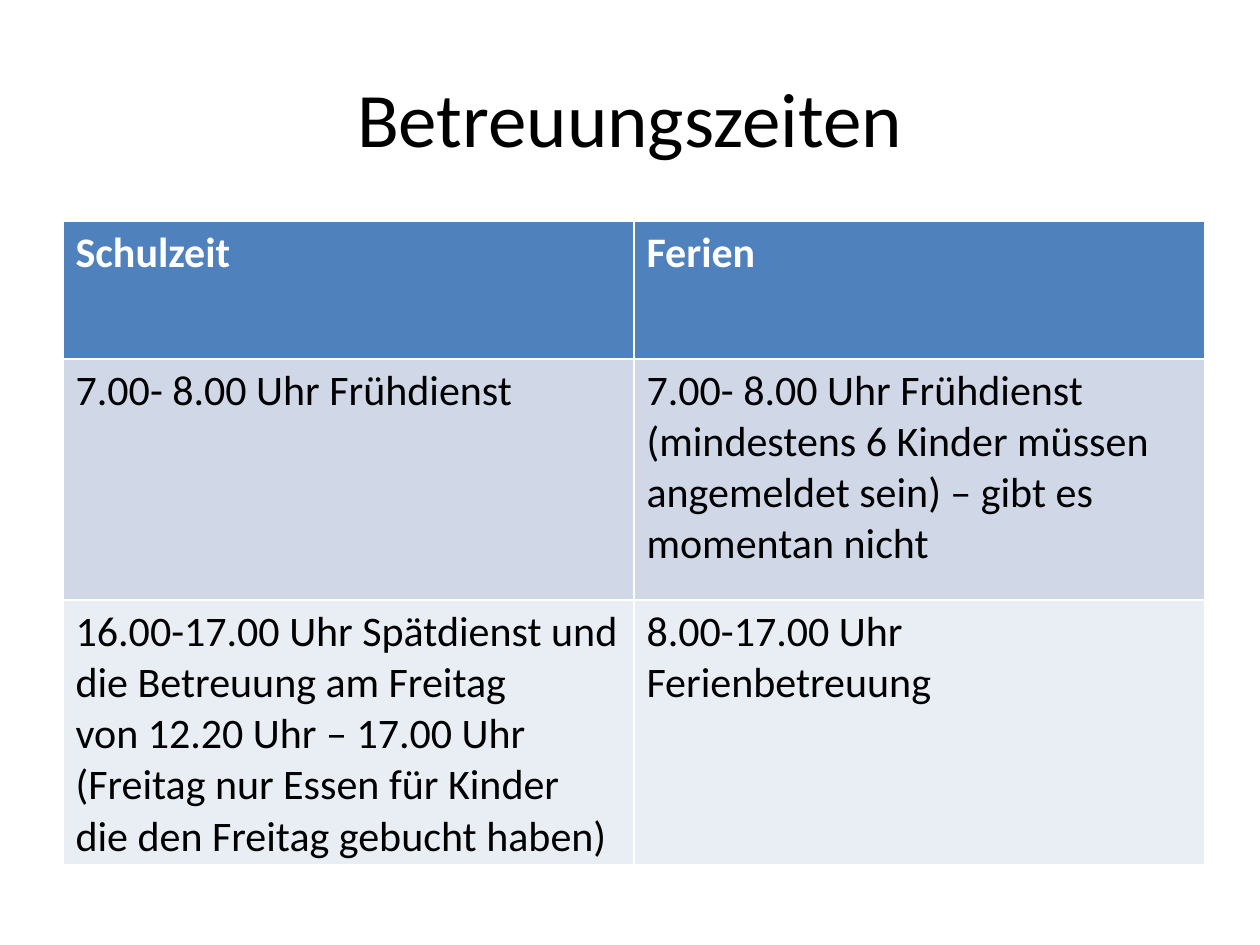
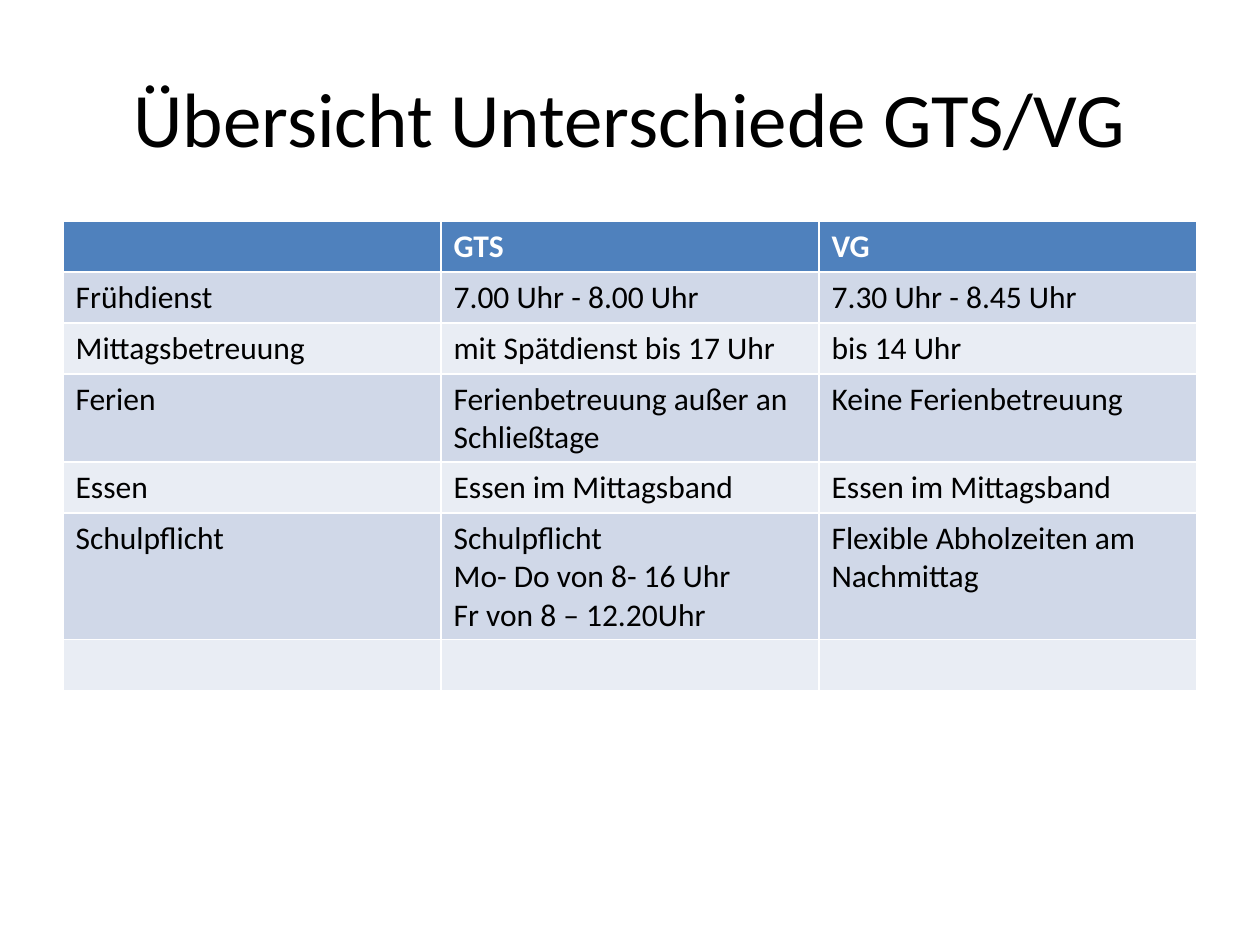
from pptx import Presentation
from pptx.dml.color import RGBColor
from pptx.enum.text import MSO_ANCHOR, PP_ALIGN
from pptx.util import Pt

SCALE = 914400 / 126
FONT = "Calibri"
BLACK = RGBColor(0x00, 0x00, 0x00)
WHITE = RGBColor(0xFF, 0xFF, 0xFF)
BLUE = RGBColor(0x4F, 0x81, 0xBD)
BANDS = [RGBColor(0xE9, 0xED, 0xF4), RGBColor(0xD0, 0xD8, 0xE8)]

PAGES = [
    dict(
        title="Betreuungszeiten", size=24, width=571, heights=[138, 241, 241],
        rows=[
            ["Schulzeit", "Ferien"],
            ["7.00- 8.00 Uhr Frühdienst",
             "7.00- 8.00 Uhr Frühdienst\n"
             "(mindestens 6 Kinder müssen angemeldet sein) – gibt es momentan nicht"],
            ["16.00-17.00 Uhr Spätdienst und die Betreuung am Freitag\n"
             "von 12.20 Uhr – 17.00 Uhr\n"
             "(Freitag nur Essen für Kinder die den Freitag gebucht haben)",
             "8.00-17.00 Uhr Ferienbetreuung"],
        ]),
    dict(
        title="Übersicht Unterschiede GTS/VG", size=18, width=378, heights=[51] * 7,
        rows=[
            ["", "GTS", "VG"],
            ["Frühdienst", "7.00 Uhr - 8.00 Uhr", "7.30 Uhr - 8.45 Uhr"],
            ["Mittagsbetreuung", "mit Spätdienst bis 17 Uhr", "bis 14 Uhr"],
            ["Ferien", "Ferienbetreuung außer an Schließtage", "Keine Ferienbetreuung"],
            ["Essen", "Essen im Mittagsband", "Essen im Mittagsband"],
            ["Schulpflicht",
             "Schulpflicht\nMo- Do von 8- 16 Uhr\nFr von 8 – 12.20Uhr",
             "Flexible Abholzeiten am Nachmittag"],
            ["", "", ""],
        ]),
]


def px(count):
    return round(count * SCALE)


def write(frame, text, size=18, color=BLACK, bold=False, align=PP_ALIGN.LEFT):
    """Fill a text frame, one paragraph per line of text."""
    frame.text = text
    for para in frame.paragraphs:
        para.alignment = align
        font = para.font
        font.name, font.size, font.bold = FONT, Pt(size), bold
        font.color.rgb = color
        for run in para.runs:
            run.font.name, run.font.size, run.font.bold = FONT, Pt(size), bold
            run.font.color.rgb = color


deck = Presentation()
deck.slide_width, deck.slide_height = px(1260), px(945)

for page in PAGES:
    slide = deck.slides.add_slide(deck.slide_layouts[6])

    title = slide.shapes.add_textbox(px(63), px(38), px(1134), px(158)).text_frame
    title.word_wrap = True
    title.vertical_anchor = MSO_ANCHOR.MIDDLE
    write(title, page["title"], size=44, align=PP_ALIGN.CENTER)

    rows, heights, width = page["rows"], page["heights"], page["width"]
    count = len(rows[0])
    # The default table style draws the white cell borders.
    table = slide.shapes.add_table(
        len(rows), count, px(63), px(221), px(width * count), px(sum(heights))).table
    for column in table.columns:
        column.width = px(width)
    for r, texts in enumerate(rows):
        table.rows[r].height = px(heights[r])
        head = r == 0
        for c, text in enumerate(texts):
            cell = table.cell(r, c)
            cell.fill.solid()
            cell.fill.fore_color.rgb = BLUE if head else BANDS[r % 2]
            write(cell.text_frame, text, size=page["size"],
                  color=WHITE if head else BLACK, bold=head)

deck.save("out.pptx")
